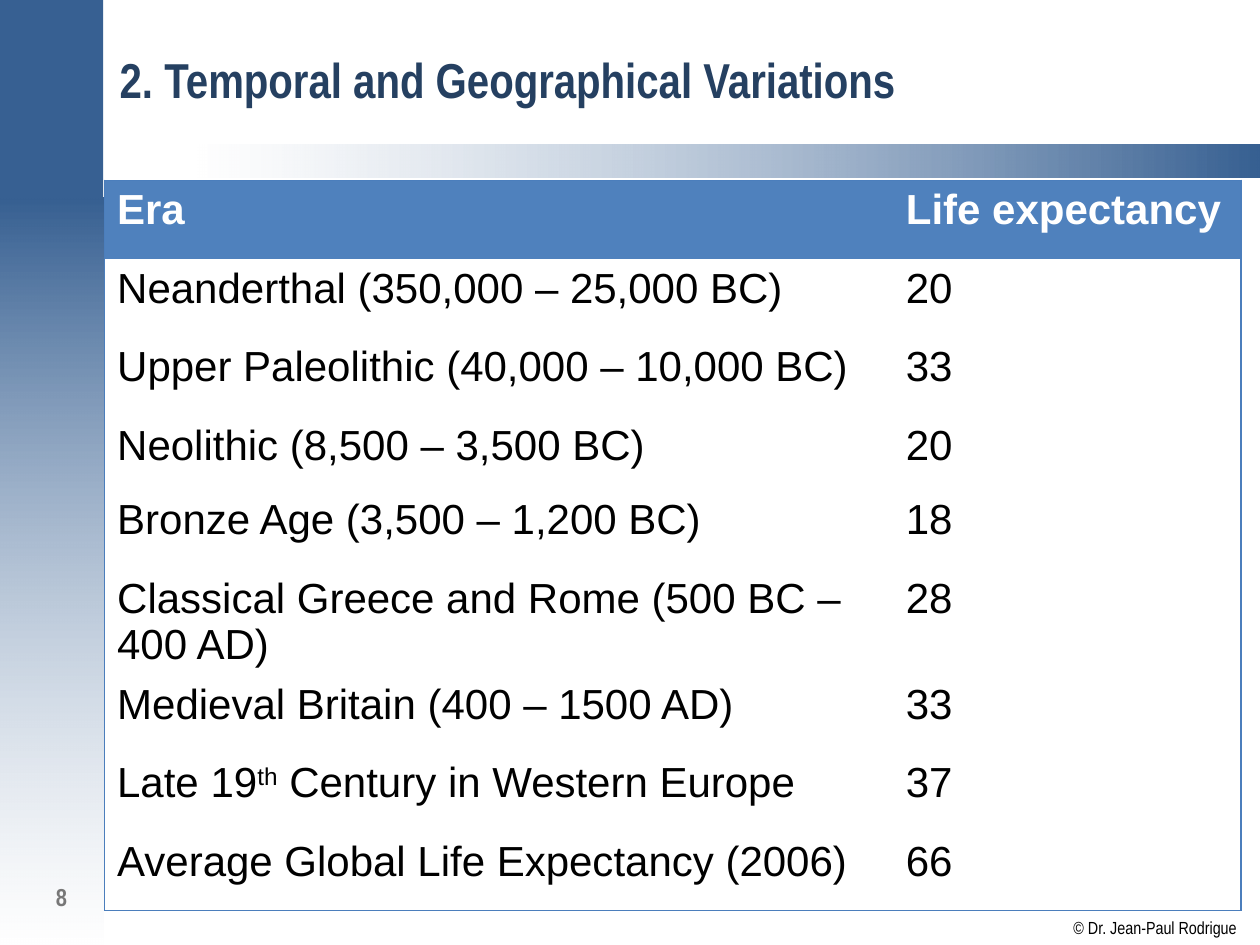
"""Build a slide with a table of life expectancy by era."""

from dataclasses import dataclass
from typing import Optional

import pptx
import pptx.dml.color
import pptx.enum.shapes
import pptx.enum.text
import pptx.oxml
import pptx.oxml.ns
import pptx.util

COLORS = {
    "blue": "376092",
    "navy": "254061",
    "header": "4F81BD",
    "border": "4B7EBC",
    "gray": "777777",
    "black": "000000",
    "white": "FFFFFF",
}
SLIDE_WIDTH = pptx.util.Inches(10)
SLIDE_HEIGHT = pptx.util.Inches(7.5)
GRID_COLUMNS, GRID_ROWS = 100, 75
HEADINGS = ("Era", "Life expectancy")
TALL_ROWS_HEIGHT, NEOLITHIC_HEIGHT = 49.9, 5.9


@dataclass
class Box:
    left: float
    top: float
    width: float
    height: float

    def lengths(self) -> tuple:
        return across(self.left), down(self.top), across(self.width), down(self.height)


@dataclass
class GradientStop:
    color: str
    opacity: int = 100


@dataclass
class Band:
    box: Box
    stops: tuple
    angle: int = 0


@dataclass
class TextStyle:
    size: int
    font: str
    color: str
    bold: bool = False


@dataclass
class Label:
    box: Box
    text: str
    style: TextStyle
    wrap: bool = True
    margin: Optional[float] = None
    alignment: pptx.enum.text.PP_ALIGN = pptx.enum.text.PP_ALIGN.LEFT


@dataclass
class Era:
    name: tuple
    life_expectancy: int


BANDS = (
    Band(Box(-0.1, 15.7, 8.3, 59.3), (GradientStop("blue"), GradientStop("white", 51)), 270),
    Band(Box(15.7, 11.5, 84.3, 2.6), (GradientStop("white", 50), GradientStop("blue"))),
    Band(Box(-0.1, -0.1, 8.3, 15.8), (GradientStop("blue"),)),
)
COPYRIGHT = Label(
    Box(85.2, 72.8, 13, 1.7), "© Dr. Jean-Paul Rodrigue",
    TextStyle(10, "Arial Narrow", "black"), wrap=False, margin=0,
)
PAGE_NUMBER = Label(
    Box(2.1, 69.5, 4.2, 4.2), "8", TextStyle(14, "Arial Narrow", "gray", True),
    alignment=pptx.enum.text.PP_ALIGN.RIGHT,
)
ERAS = (
    Era(("Neanderthal (350,000 – 25,000 BC)",), 20),
    Era(("Upper Paleolithic (40,000 – 10,000 BC)",), 33),
    Era(("Neolithic (8,500 – 3,500 BC)",), 20),
    Era(("Bronze Age (3,500 – 1,200 BC)",), 18),
    Era(("Classical Greece and Rome (500 BC – 400 AD)",), 28),
    Era(("Medieval Britain (400 – 1500 AD)",), 33),
    Era(("Late 19", "th", " Century in Western Europe"), 37),
    Era(("Average Global Life Expectancy (2006)",), 66),
)


def across(columns: float) -> int:
    return round(SLIDE_WIDTH * columns / GRID_COLUMNS)


def down(rows: float) -> int:
    return round(SLIDE_HEIGHT * rows / GRID_ROWS)


def rgb(name: str) -> pptx.dml.color.RGBColor:
    return pptx.dml.color.RGBColor.from_string(COLORS[name])


def format_runs(paragraph, style: TextStyle) -> None:
    for run in paragraph.runs:
        run.font.size = pptx.util.Pt(style.size)
        run.font.name = style.font
        run.font.bold = style.bold
        run.font.color.rgb = rgb(style.color)


def draw_band(slide, band: Band) -> None:
    shape = slide.shapes.add_shape(
        pptx.enum.shapes.MSO_SHAPE.RECTANGLE, *band.box.lengths()
    )
    shape.shadow.inherit = False
    shape.line.fill.background()
    if len(band.stops) == 1:
        shape.fill.solid()
        shape.fill.fore_color.rgb = rgb(band.stops[0].color)
        return
    shape.fill.gradient()
    shape.fill.gradient_angle = band.angle
    for gradient_stop, stop in zip(shape.fill.gradient_stops, band.stops):
        gradient_stop.color.rgb = rgb(stop.color)
    colors = shape._element.spPr.findall(".//" + pptx.oxml.ns.qn("a:srgbClr"))
    for color, stop in zip(colors, band.stops):
        if stop.opacity < 100:
            alpha = pptx.oxml.parse_xml(
                f'<a:alpha {pptx.oxml.ns.nsdecls("a")} val="{stop.opacity * 1000}"/>'
            )
            color.append(alpha)


def draw_label(slide, label: Label) -> None:
    text_frame = slide.shapes.add_textbox(*label.box.lengths()).text_frame
    text_frame.word_wrap = label.wrap
    if label.margin is not None:
        text_frame.margin_left = text_frame.margin_right = label.margin
        text_frame.margin_top = text_frame.margin_bottom = label.margin
    text_frame.text = label.text
    text_frame.paragraphs[0].alignment = label.alignment
    format_runs(text_frame.paragraphs[0], label.style)


def draw_title(slide, text: str) -> None:
    title = slide.shapes.title
    title.left, title.top, title.width, title.height = Box(8.5, 1.1, 89.8, 10.4).lengths()
    title.text_frame.text = text
    title.text_frame.vertical_anchor = pptx.enum.text.MSO_ANCHOR.MIDDLE
    paragraph = title.text_frame.paragraphs[0]
    paragraph.alignment = pptx.enum.text.PP_ALIGN.LEFT
    format_runs(paragraph, TextStyle(28, "Arial Narrow", "navy", True))


def set_borders(cell, sides: dict) -> None:
    properties = cell._tc.get_or_add_tcPr()
    for index, (side, visible) in enumerate(sides.items()):
        fill = "<a:noFill/>"
        if visible:
            fill = f'<a:solidFill><a:srgbClr val="{COLORS["border"]}"/></a:solidFill>'
        border = pptx.oxml.parse_xml(
            f'<a:ln{side} {pptx.oxml.ns.nsdecls("a")} w="{pptx.util.Pt(0.75)}">{fill}</a:ln{side}>'
        )
        properties.insert(index, border)


def fill_cell(cell, parts: tuple, is_header: bool) -> None:
    paragraph = cell.text_frame.paragraphs[0]
    for part in parts:
        run = paragraph.add_run()
        run.text = part
        if part == "th":
            run._r.get_or_add_rPr().set("baseline", "30000")
    format_runs(paragraph, TextStyle(24, "Arial", "white" if is_header else "black", is_header))
    if is_header:
        cell.fill.solid()
        cell.fill.fore_color.rgb = rgb("header")
    else:
        cell.fill.background()


def draw_table(slide) -> None:
    rows = [tuple((heading,) for heading in HEADINGS)]
    rows += [(era.name, (str(era.life_expectancy),)) for era in ERAS]
    box = Box(8.3, 14.3, 90.2, TALL_ROWS_HEIGHT + NEOLITHIC_HEIGHT)
    table = slide.shapes.add_table(len(rows), len(HEADINGS), *box.lengths()).table
    table.horz_banding = False
    for column, width in zip(table.columns, (62.6, 27.6)):
        column.width = across(width)
    last_row, last_column = len(rows) - 1, len(HEADINGS) - 1
    for row, values in enumerate(rows):
        is_neolithic = values[0][0].startswith("Neolithic")
        table.rows[row].height = down(
            NEOLITHIC_HEIGHT if is_neolithic else TALL_ROWS_HEIGHT / last_row
        )
        for column, parts in enumerate(values):
            cell = table.cell(row, column)
            fill_cell(cell, parts, row == 0)
            set_borders(cell, {"L": column == 0, "R": column == last_column,
                               "T": row == 0, "B": row == last_row})


def main() -> None:
    presentation = pptx.Presentation()
    presentation.slide_width, presentation.slide_height = SLIDE_WIDTH, SLIDE_HEIGHT
    slide = presentation.slides.add_slide(presentation.slide_layouts.get_by_name("Title Only"))
    for band in BANDS:
        draw_band(slide, band)
    draw_title(slide, "2. Temporal and Geographical Variations")
    draw_table(slide)
    for label in (COPYRIGHT, PAGE_NUMBER):
        draw_label(slide, label)
    presentation.save("out.pptx")


if __name__ == "__main__":
    main()
